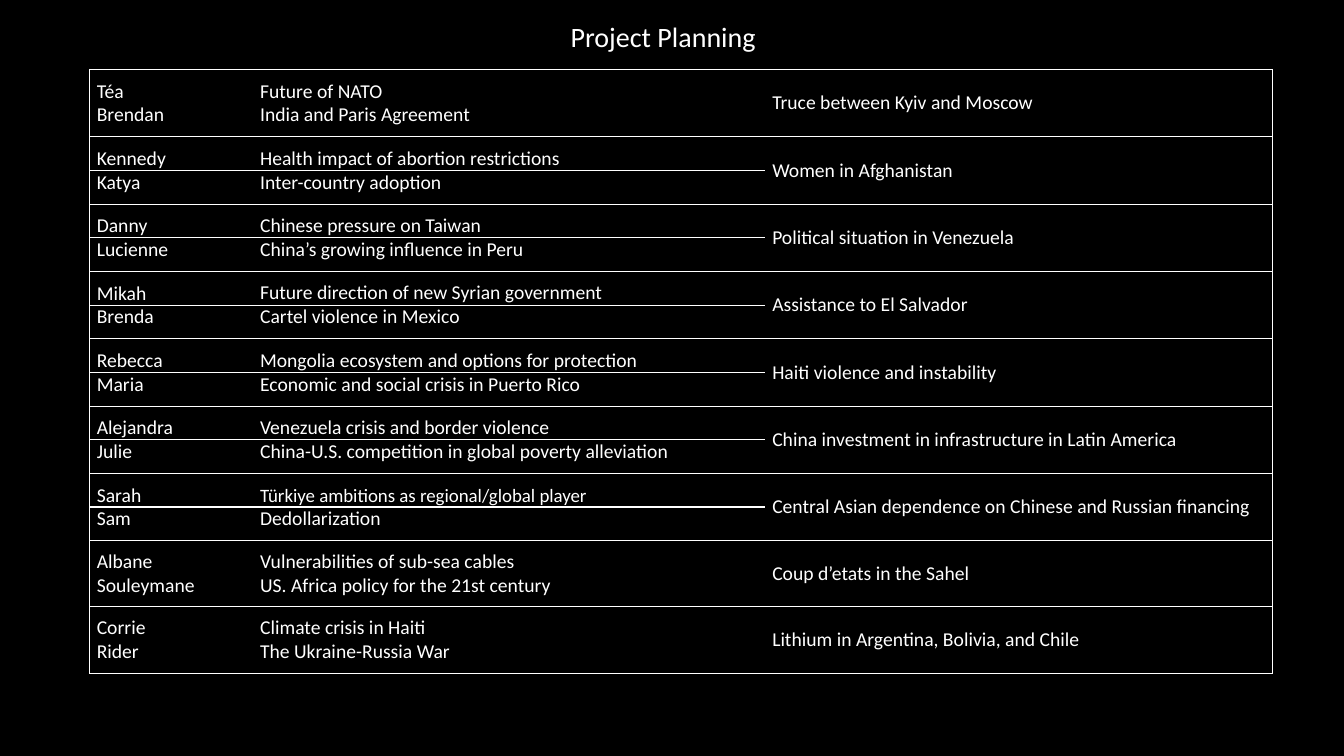
import pptx
import pptx.dml.color
import pptx.enum.text
import pptx.oxml.ns
import pptx.util
from lxml import etree

Inches = pptx.util.Inches
Anchor = pptx.enum.text.MSO_ANCHOR
WHITE = pptx.dml.color.RGBColor(0xFF, 0xFF, 0xFF)
BLACK = pptx.dml.color.RGBColor(0x00, 0x00, 0x00)
NO_GRID_STYLE = "{2D5ABB26-0587-4C30-8999-92F81FD0307C}"
COLUMN_WIDTHS = (1.62, 5.08, 5.03)
ROW_HEIGHT = 0.33
RULED_PAIRS = range(1, 7)  # pairs with a line between the two people
UPPER_PADDED_PAIRS = range(7)
LOWER_PADDED_PAIRS = range(6)

# Two (person, topic) entries, then the topic the pair shares
PAIRS = [
    (("Téa", "Future of NATO"), ("Brendan", "India and Paris Agreement"),
     "Truce between Kyiv and Moscow"),
    (("Kennedy", "Health impact of abortion restrictions"), ("Katya", "Inter-country adoption"),
     "Women in Afghanistan"),
    (("Danny", "Chinese pressure on Taiwan"), ("Lucienne", "China’s growing influence in Peru"),
     "Political situation in Venezuela"),
    (("Mikah", "Future direction of new Syrian government"), ("Brenda", "Cartel violence in Mexico"),
     "Assistance to El Salvador"),
    (("Rebecca", "Mongolia ecosystem and options for protection"),
     ("Maria", "Economic and social crisis in Puerto Rico"),
     "Haiti violence and instability"),
    (("Alejandra", "Venezuela crisis and border violence"),
     ("Julie", "China-U.S. competition in global poverty alleviation"),
     "China investment in infrastructure in Latin America"),
    (("Sarah", "Türkiye ambitions as regional/global player"), ("Sam", "Dedollarization"),
     "Central Asian dependence on Chinese and Russian financing"),
    (("Albane", "Vulnerabilities of sub-sea cables"),
     ("Souleymane", "US. Africa policy for the 21st century"),
     "Coup d’etats in the Sahel"),
    (("Corrie", "Climate crisis in Haiti"), ("Rider", "The Ukraine-Russia War"),
     "Lithium in Argentina, Bolivia, and Chile"),
]
SMALLER_TOPIC = "Türkiye ambitions as regional/global player"


def write_text(text_frame, text, size=14, color=WHITE, font="Calibri"):
    paragraph = text_frame.paragraphs[0]
    paragraph.alignment = pptx.enum.text.PP_ALIGN.LEFT
    run = paragraph.add_run()
    run.text = text
    run.font.size = pptx.util.Pt(size)
    run.font.name = font
    run.font.color.rgb = color


def set_borders(cell, sides):
    """Draw white lines on the sides named by letters out of L, R, T, B; clear the others."""
    cell.fill.background()
    properties = cell._tc.get_or_add_tcPr()
    qualified = pptx.oxml.ns.qn
    for position, side in enumerate("LRTB"):
        line = etree.Element(qualified(f"a:ln{side}"), w=str(pptx.util.Pt(1)))
        properties.insert(position, line)
        if side in sides:
            fill = etree.SubElement(line, qualified("a:solidFill"))
            etree.SubElement(fill, qualified("a:srgbClr"), val=str(WHITE))
        else:
            etree.SubElement(line, qualified("a:noFill"))


class PlanningSlide:
    """Holds the slide and adds its elements in white on black."""

    def __init__(self, presentation):
        self.slide = presentation.slides.add_slide(presentation.slide_layouts[5])
        background = self.slide.background.fill
        background.solid()
        background.fore_color.rgb = BLACK

    def title(self, text, left, top, width, height):
        shape = self.slide.shapes.title
        shape.left, shape.top = Inches(left), Inches(top)
        shape.width, shape.height = Inches(width), Inches(height)
        frame = shape.text_frame
        frame.word_wrap = False
        frame.auto_size = pptx.enum.text.MSO_AUTO_SIZE.SHAPE_TO_FIT_TEXT
        frame.vertical_anchor = Anchor.TOP
        write_text(frame, text, size=20)

    def cell(self, cell, text, anchor, sides, top=0, bottom=0):
        cell.vertical_anchor = anchor
        cell.margin_left = cell.margin_right = Inches(0.07)
        cell.margin_top, cell.margin_bottom = Inches(top), Inches(bottom)
        set_borders(cell, sides)
        write_text(cell.text_frame, text, size=13.5 if text == SMALLER_TOPIC else 14)

    def pair(self, table, index, upper, lower, shared):
        first, second = 2 * index, 2 * index + 1
        middle_up, middle_down = ("B", "T") if index in RULED_PAIRS else ("", "")
        upper_padding = 0.1 if index in UPPER_PADDED_PAIRS else 0
        lower_padding = 0.1 if index in LOWER_PADDED_PAIRS else 0
        for column, left_side in enumerate(("L", "")):
            self.cell(table.cell(first, column), upper[column], Anchor.BOTTOM,
                      left_side + "T" + middle_up, top=0 if column else upper_padding)
            self.cell(table.cell(second, column), lower[column], Anchor.TOP,
                      left_side + "B" + middle_down, bottom=0 if column else lower_padding)
        topic = table.cell(first, 2)
        topic.merge(table.cell(second, 2))
        self.cell(topic, shared, Anchor.MIDDLE, "RTB")
        set_borders(table.cell(second, 2), "RB")

    def pairs_table(self, pairs, left, top):
        count = 2 * len(pairs)
        frame = self.slide.shapes.add_table(
            count, len(COLUMN_WIDTHS), Inches(left), Inches(top),
            Inches(sum(COLUMN_WIDTHS)), Inches(count * ROW_HEIGHT))
        table = frame.table
        table.first_row = table.horz_banding = False
        table._tbl.tblPr.find(pptx.oxml.ns.qn("a:tableStyleId")).text = NO_GRID_STYLE
        for column, width in zip(table.columns, COLUMN_WIDTHS):
            column.width = Inches(width)
        for row in table.rows:
            row.height = Inches(ROW_HEIGHT)
        for index, (upper, lower, shared) in enumerate(pairs):
            self.pair(table, index, upper, lower, shared)


def main():
    presentation = pptx.Presentation()
    presentation.slide_width = Inches(13.33)
    presentation.slide_height = Inches(7.5)
    planning = PlanningSlide(presentation)
    planning.pairs_table(PAIRS, left=0.89, top=0.69)
    planning.title("Project Planning", left=5.56, top=0.14, width=2.11, height=0.44)
    presentation.save("out.pptx")


if __name__ == "__main__":
    main()
